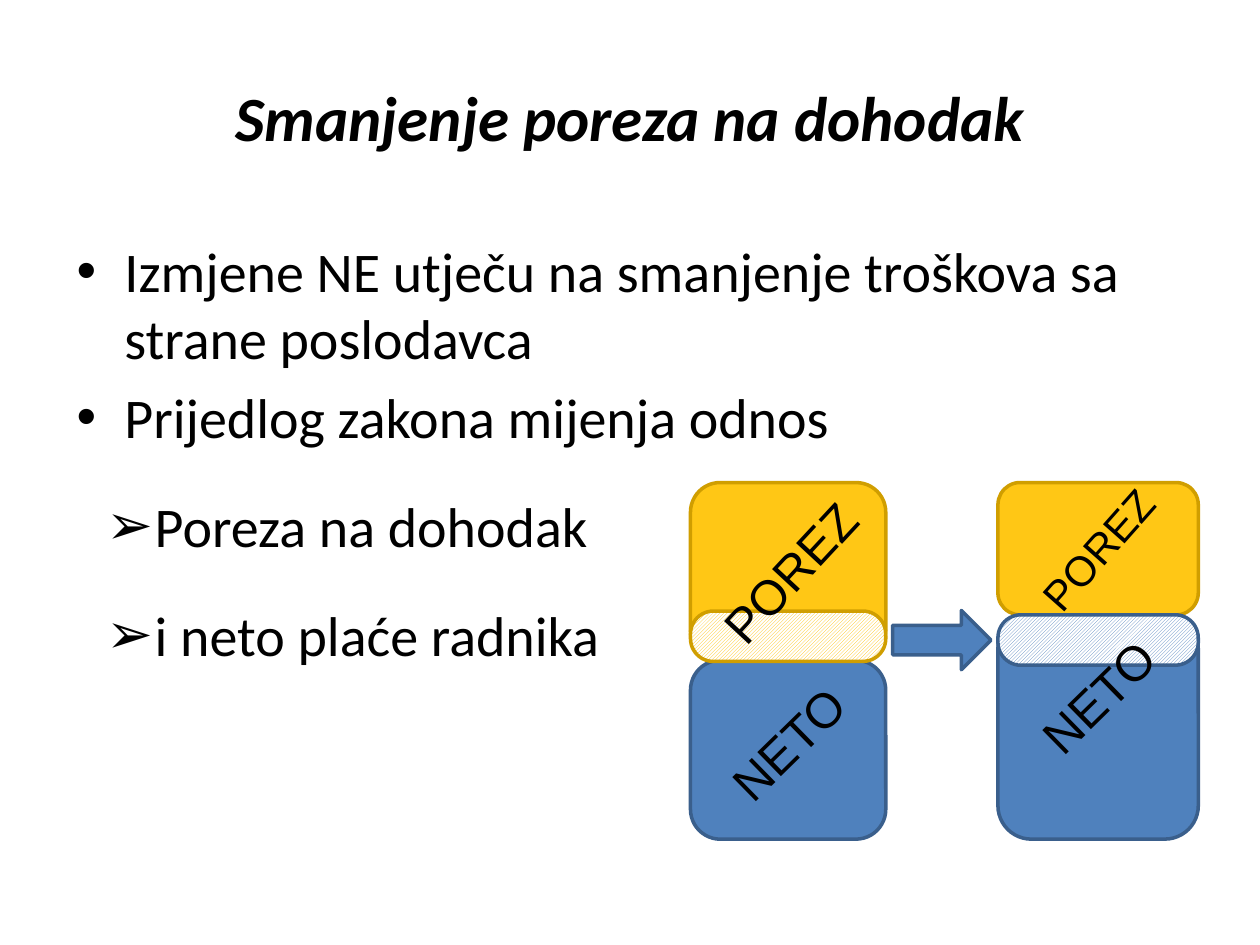
from lxml import etree
from pptx import Presentation
from pptx.dml.color import RGBColor
from pptx.enum.dml import MSO_PATTERN
from pptx.enum.shapes import MSO_SHAPE
from pptx.enum.text import MSO_ANCHOR, MSO_AUTO_SIZE, PP_ALIGN
from pptx.oxml.ns import qn
from pptx.util import Pt

PX = 9144
ROUNDED = MSO_SHAPE.ROUNDED_RECTANGLE
ARROW = MSO_SHAPE.DOWN_ARROW
HATCH = MSO_PATTERN.DARK_UPWARD_DIAGONAL
MIDDLE = MSO_ANCHOR.MIDDLE
CENTER = PP_ALIGN.CENTER
NO_FIT = MSO_AUTO_SIZE.NONE
FIT_SHAPE = MSO_AUTO_SIZE.SHAPE_TO_FIT_TEXT

COLORS = {
    "text": "000000",
    "white": "FFFFFF",
    "tax": "FFC715",
    "tax_line": "D09E00",
    "tax_hatch": "FFC000",
    "net": "4F81BD",
    "net_line": "3A5F8C",
    "net_hatch": "4F81BD",
}
TITLE_FONT = {"name": "Calibri", "size": Pt(36), "bold": True, "italic": True}
BODY_FONT = {"name": "Calibri", "size": Pt(32)}


def color(name):
    """Return the named colour."""
    return RGBColor.from_string(COLORS[name])


def emu(*lengths):
    """Turn px lengths into EMU."""
    return [round(length * PX) for length in lengths]


def style_font(font, values):
    """Set the font attributes and the text colour."""
    for name, value in values.items():
        setattr(font, name, value)
    font.color.rgb = color("text")


def add_title(slide, box, text):
    """Move the title placeholder into the box and format it."""
    title = slide.shapes.title
    title.left, title.top, title.width, title.height = emu(*box)
    frame = title.text_frame
    frame.text = text
    frame.auto_size = NO_FIT
    frame.vertical_anchor = MIDDLE
    paragraph = frame.paragraphs[0]
    paragraph.alignment = CENTER
    style_font(paragraph.runs[0].font, TITLE_FONT)


def add_bullets(slide, box, items, bullet, gap):
    """Add a bulleted list with a gap in points between its items."""
    frame = slide.shapes.add_textbox(*emu(*box)).text_frame
    frame.word_wrap = True
    for index, item in enumerate(items):
        paragraph = frame.paragraphs[0] if index == 0 else frame.add_paragraph()
        properties = paragraph._p.get_or_add_pPr()
        indent = emu(38)[0]
        properties.set("marL", str(indent))
        properties.set("indent", str(-indent))
        etree.SubElement(properties, qn("a:buFont")).set("typeface", "Arial")
        etree.SubElement(properties, qn("a:buChar")).set("char", bullet)
        paragraph.space_before = Pt(gap if index else 0)
        run = paragraph.add_run()
        run.text = item
        style_font(run.font, BODY_FONT)


def add_block(slide, kind, box, part, hatched=False):
    """Add a filled or hatched shape in the colours of its part."""
    shape = slide.shapes.add_shape(kind, *emu(*box))
    shape.shadow.inherit = False
    if hatched:
        shape.adjustments[0] = 0.455
        shape.fill.patterned()
        shape.fill.pattern = HATCH
        shape.fill.fore_color.rgb = color(f"{part}_hatch")
        shape.fill.back_color.rgb = color("white")
    else:
        shape.fill.solid()
        shape.fill.fore_color.rgb = color(part)
    shape.line.color.rgb = color(f"{part}_line")
    shape.line.width = Pt(2)
    return shape


def add_label(slide, box, text, size, rotation):
    """Add a slanted label."""
    label = slide.shapes.add_textbox(*emu(*box))
    label.rotation = rotation
    frame = label.text_frame
    frame.word_wrap = False
    frame.auto_size = FIT_SHAPE
    run = frame.paragraphs[0].add_run()
    run.text = text
    style_font(run.font, {"name": "Arial", "size": Pt(size)})


def add_stack(slide, box, tax_height, band_part, band_top, labels):
    """Add tax above net pay, the shifted band and the labels in the box."""
    left, top, width, height = box
    add_block(slide, ROUNDED, (left, top, width, tax_height), "tax")
    net_box = (left, top + tax_height, width, height - tax_height)
    add_block(slide, ROUNDED, net_box, "net")
    add_block(slide, ROUNDED, (left, top + band_top, width, 40), band_part, True)
    for text, (x, y, label_width, label_height), size, rotation in labels:
        label_box = (left + x, top + y, label_width, label_height)
        add_label(slide, label_box, text, size, rotation)


def add_comparison(slide, box):
    """Add the stacks before and after the change, with an arrow between."""
    left, top, width, height = box
    before = [
        ("POREZ", (2, 42, 155, 57), 28, 312.9),
        ("NETO", (14, 178, 128, 57), 28, 315.6),
    ]
    after = [
        ("POREZ", (12, 27, 136, 51), 24, 311.5),
        ("NETO", (16, 141, 128, 57), 28, 315.6),
    ]
    add_stack(slide, (left, top, 155, height), 141, "tax", 102, before)
    after_box = (left + width - 159, top, 159, height)
    add_stack(slide, after_box, 105, "net", 105, after)
    arrow = add_block(slide, ARROW, (left + 176, top + 86, 47, 78), "net")
    arrow.rotation = 270


def main():
    """Build the slide and save it."""
    presentation = Presentation()
    presentation.slide_width, presentation.slide_height = emu(1000, 750)
    slide = presentation.slides.add_slide(presentation.slide_layouts[5])
    add_title(slide, (50, 30, 900, 125), "Smanjenje poreza na dohodak")
    changes = [
        "Izmjene NE utječu na smanjenje troškova sa strane poslodavca",
        "Prijedlog zakona mijenja odnos",
    ]
    add_bullets(slide, (51, 183, 900, 183), changes, "•", 6.4)
    add_comparison(slide, (548, 383, 403, 283))
    parts = ["Poreza na dohodak", "i neto plaće radnika"]
    add_bullets(slide, (75, 385, 416, 183), parts, "➢", 24)
    presentation.save("out.pptx")


if __name__ == "__main__":
    main()
